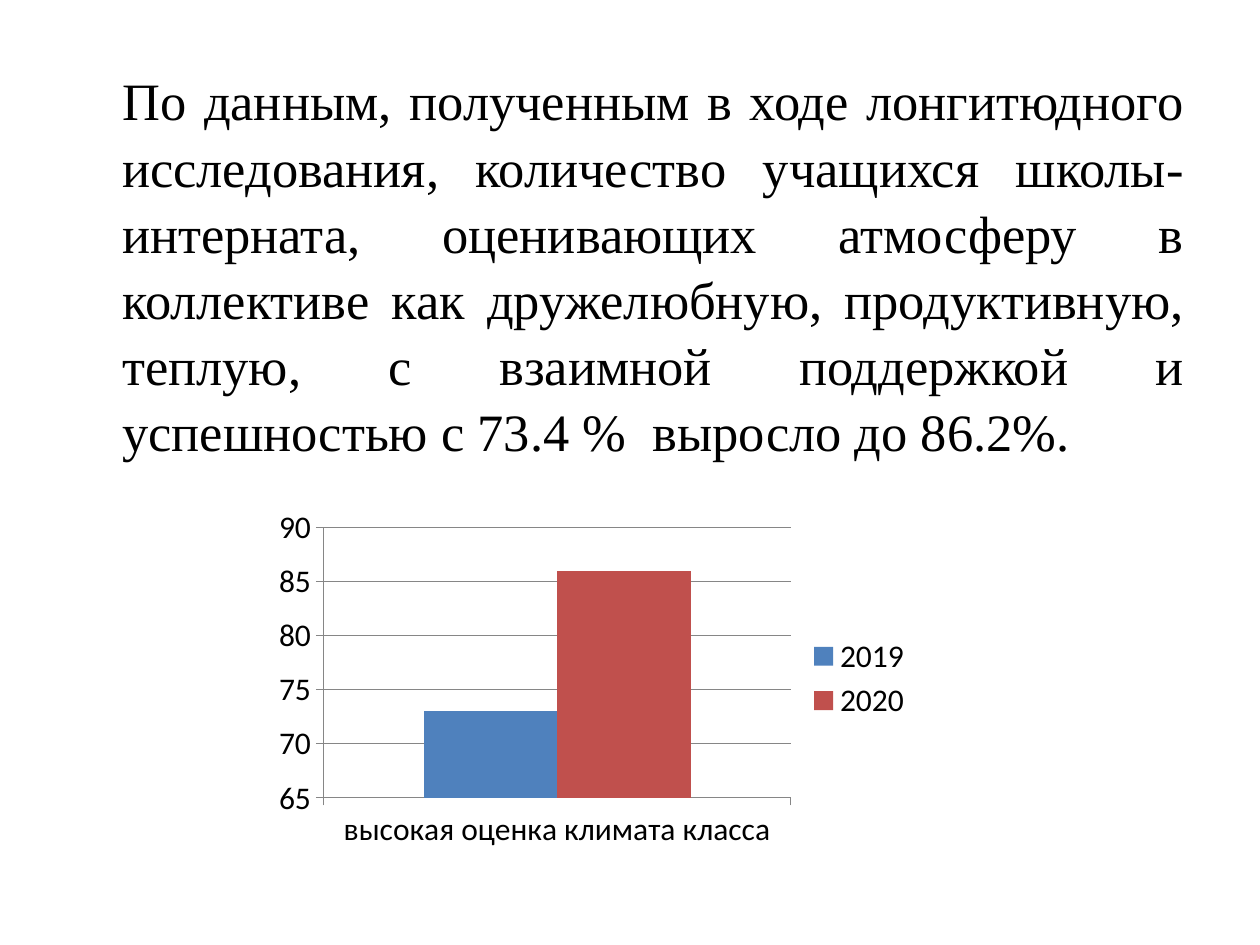
"""Build a slide on the class climate survey with a column chart."""
from pptx import Presentation
from pptx.chart.data import CategoryChartData
from pptx.dml.color import RGBColor
from pptx.enum.chart import XL_CHART_TYPE, XL_LEGEND_POSITION, XL_TICK_MARK
from pptx.enum.text import PP_ALIGN
from pptx.util import Inches, Pt

BLACK = RGBColor(0x00, 0x00, 0x00)
GRAY = RGBColor(0x86, 0x86, 0x86)
BLUE = RGBColor(0x4F, 0x81, 0xBD)
RED = RGBColor(0xC0, 0x50, 0x4D)


def add_text(slide, text, left, top, width, height, font, size, color, alignment):
    shape = slide.shapes.add_textbox(Inches(left), Inches(top), Inches(width), Inches(height))
    frame = shape.text_frame
    frame.word_wrap = True
    frame.margin_left = Inches(0.47)
    paragraph = frame.paragraphs[0]
    paragraph.alignment = alignment
    paragraph.space_before = Pt(6)
    paragraph.line_spacing = 1.05
    run = paragraph.add_run()
    run.text = text
    run.font.name = font
    run.font.size = Pt(size)
    run.font.color.rgb = color


presentation = Presentation()
presentation.slide_width = Inches(10)
presentation.slide_height = Inches(7.5)
slide = presentation.slides.add_slide(presentation.slide_layouts[6])

add_text(
    slide,
    "По данным, полученным в ходе лонгитюдного исследования, количество учащихся "
    "школы-интерната, оценивающих атмосферу в коллективе как дружелюбную, "
    "продуктивную, теплую, с взаимной поддержкой и успешностью "
    "с 73.4 %  выросло до 86.2%.",
    left=0.5, top=0.47, width=9, height=3.4,
    font="Times New Roman", size=30, color=BLACK, alignment=PP_ALIGN.JUSTIFY,
)

chart_data = CategoryChartData()
chart_data.categories = ["высокая оценка климата класса"]
chart_data.add_series("2019", [73])
chart_data.add_series("2020", [86])
chart = slide.shapes.add_chart(
    XL_CHART_TYPE.COLUMN_CLUSTERED,
    Inches(2.11), Inches(3.98), Inches(5.23), Inches(2.81), chart_data,
).chart
chart.has_title = False
chart.font.name = "Calibri"
chart.font.size = Pt(18)
chart.font.color.rgb = BLACK
chart.has_legend = True
chart.legend.position = XL_LEGEND_POSITION.RIGHT
chart.legend.include_in_layout = False

plot = chart.plots[0]
plot.vary_by_categories = False
plot.gap_width = 150
for series, color in zip(plot.series, (BLUE, RED)):
    series.format.fill.solid()
    series.format.fill.fore_color.rgb = color

value_axis = chart.value_axis
value_axis.minimum_scale = 65
value_axis.maximum_scale = 90
value_axis.major_unit = 5
value_axis.has_major_gridlines = True
for axis in (chart.category_axis, value_axis):
    axis.major_tick_mark = XL_TICK_MARK.OUTSIDE
for line_owner in (chart.category_axis, value_axis, value_axis.major_gridlines):
    line_owner.format.line.color.rgb = GRAY
    line_owner.format.line.width = Pt(0.75)

presentation.save("out.pptx")
